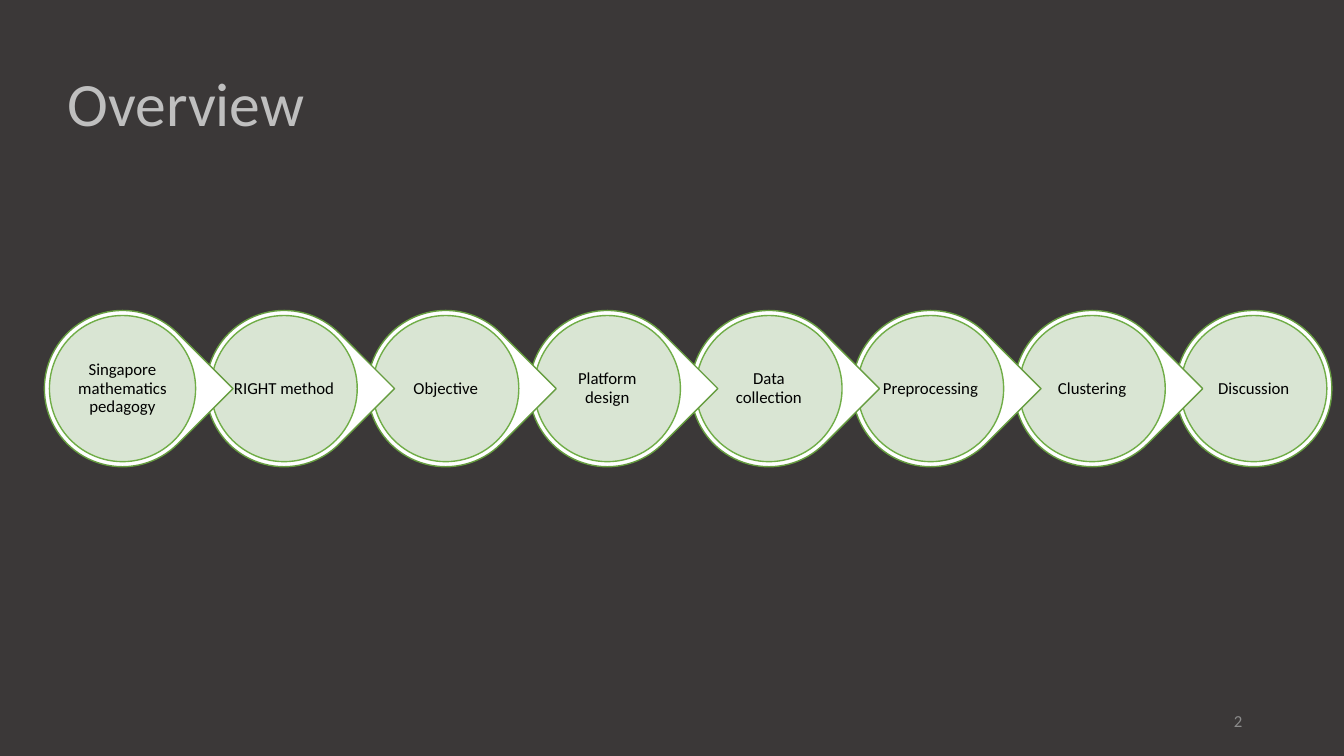
from lxml import etree
from pptx import Presentation
from pptx import util as u
from pptx.dml.color import RGBColor
from pptx.enum import shapes, text
from pptx.oxml.ns import qn

PX = 9144  # 100 px to the inch

BACKGROUND = RGBColor(0x3B, 0x38, 0x38)
TITLE_GREY = RGBColor(0xBF, 0xBF, 0xBF)
NUMBER_GREY = RGBColor(0x8C, 0x8C, 0x8C)
BLACK = RGBColor(0, 0, 0)
WHITE = RGBColor(0xFF, 0xFF, 0xFF)
PALE_GREEN = RGBColor(0xD5, 0xE3, 0xCF)
GREEN = RGBColor(0x70, 0xAD, 0x47)
DARK_GREEN = RGBColor(0x66, 0x9D, 0x40)

STEPS = [
    "Singapore mathematics pedagogy", "RIGHT method", "Objective", "Platform design",
    "Data collection", "Preprocessing", "Clustering", "Discussion",
]


def emu(box):
    return [round(length * PX) for length in box]


def inset(box, margin):
    left, top, width, height = box
    return left + margin, top + margin, width - 2 * margin, height - 2 * margin


def add_label(slide, box, wording, size, color, align, spacing=1.0, margins=(10, 5)):
    label = slide.shapes.add_textbox(*emu(box))
    across, down = emu(margins)
    frame_format = {
        "word_wrap": True, "vertical_anchor": text.MSO_ANCHOR.MIDDLE,
        "margin_left": across, "margin_right": across,
        "margin_top": down, "margin_bottom": down,
    }
    for name, value in frame_format.items():
        setattr(label.text_frame, name, value)
    paragraph = label.text_frame.paragraphs[0]
    paragraph.text = wording
    paragraph.alignment = align
    paragraph.line_spacing = spacing
    font = paragraph.runs[0].font
    for name, value in {"name": "Calibri", "size": u.Pt(size)}.items():
        setattr(font, name, value)
    font.color.rgb = color


def add_disc(slide, preset, box, fill, line):
    disc = slide.shapes.add_shape(preset, *emu(box))
    disc.shadow.inherit = False
    disc.fill.solid()
    disc.fill.fore_color.rgb = fill
    disc.line.color.rgb = line
    disc.line.width = u.Pt(1)
    return disc


def set_opacity(shape, percent):
    color = shape.fill._xPr.find(qn("a:solidFill"))[0]
    etree.SubElement(color, qn("a:alpha"), val=str(percent * 1000))


def add_step(slide, box, wording, is_last):
    if is_last:
        add_disc(slide, shapes.MSO_SHAPE.OVAL, box, WHITE, DARK_GREEN)
    else:
        pointer = add_disc(slide, shapes.MSO_SHAPE.TEAR, box, WHITE, DARK_GREEN)
        pointer.rotation = 45
    face = add_disc(slide, shapes.MSO_SHAPE.OVAL, inset(box, 5), PALE_GREEN, GREEN)
    set_opacity(face, 90)
    add_label(slide, inset(box, 25.5), wording, 12, BLACK, text.PP_ALIGN.CENTER,
              spacing=0.9, margins=(2, 2))


def add_process(slide, box, steps):
    """Spread the steps over the box, each one lying over the step after it."""
    left, top, width, diameter = box
    last = len(steps) - 1
    pitch = (width - diameter) / last
    for index in range(last, -1, -1):
        step_box = (left + index * pitch, top, diameter, diameter)
        add_step(slide, step_box, steps[index], index == last)


def add_overview(presentation):
    slide = presentation.slides.add_slide(presentation.slide_layouts[6])
    slide.background.fill.solid()
    slide.background.fill.fore_color.rgb = BACKGROUND
    add_label(slide, (57, 55, 1221, 101), "Overview", 44, TITLE_GREY,
              text.PP_ALIGN.LEFT, spacing=0.9)
    add_process(slide, (44, 308, 1277, 155), STEPS)
    add_label(slide, (942, 695, 300, 40), "2", 12, NUMBER_GREY, text.PP_ALIGN.RIGHT)


def main():
    presentation = Presentation()
    presentation.slide_width, presentation.slide_height = emu((1333, 750))
    add_overview(presentation)
    presentation.save("out.pptx")


if __name__ == "__main__":
    main()
